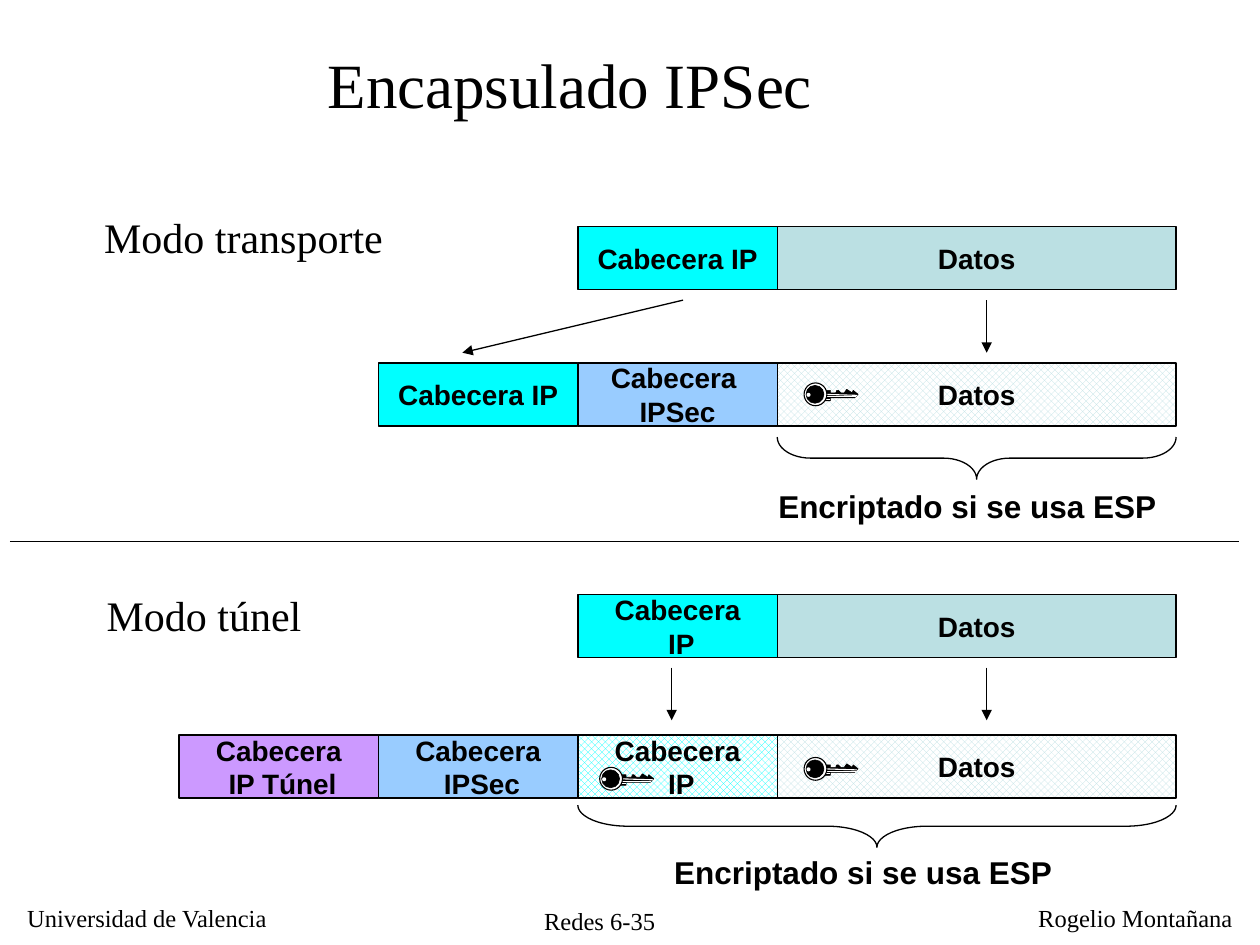
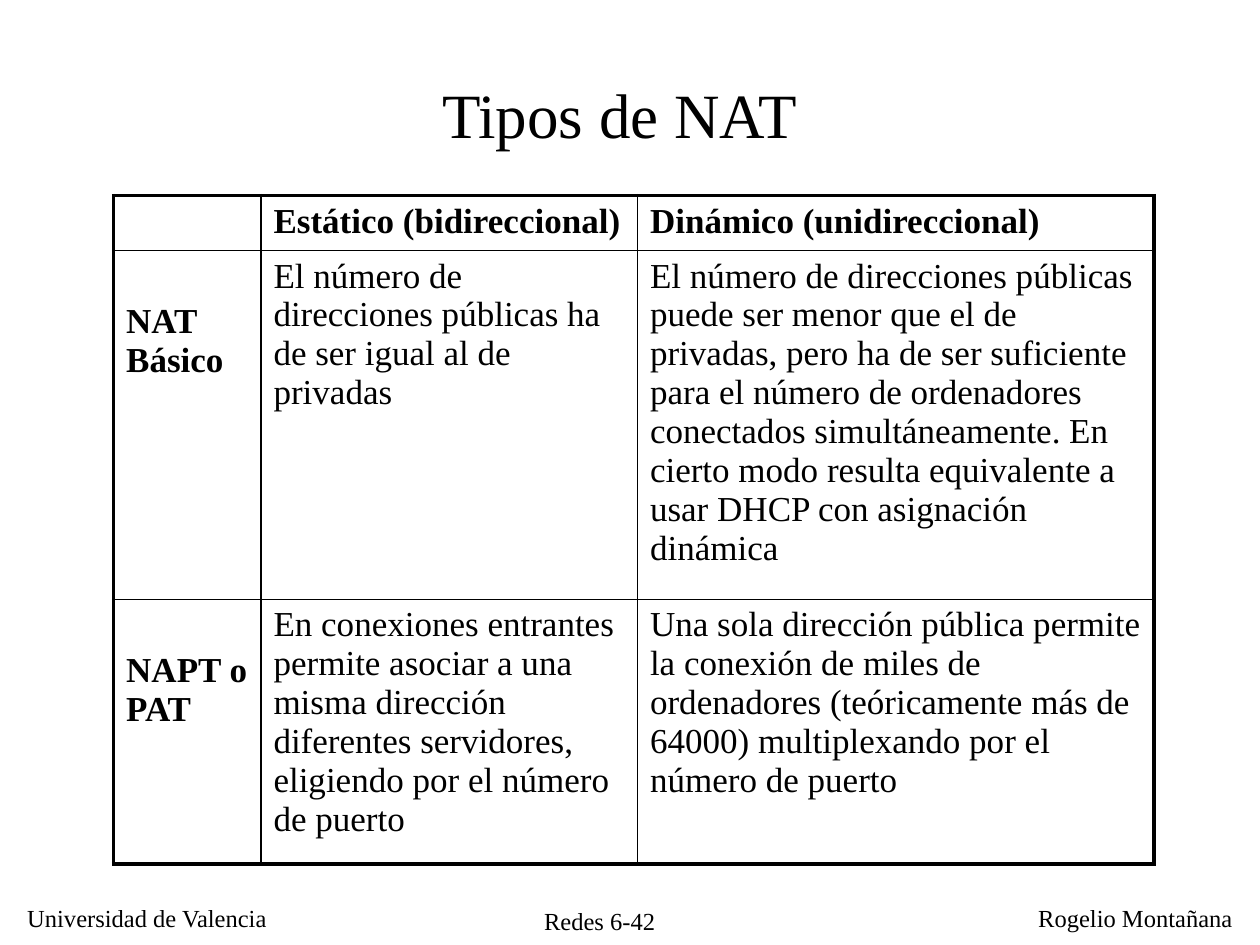
"""Build two networking slides: IPSec encapsulation and NAT types."""
from dataclasses import dataclass

from lxml.etree import SubElement
from pptx import Presentation
from pptx.dml.color import RGBColor
from pptx.enum.dml import MSO_PATTERN
from pptx.enum.shapes import MSO_CONNECTOR, MSO_SHAPE
from pptx.enum.text import MSO_ANCHOR, MSO_AUTO_SIZE, PP_ALIGN
from pptx.oxml import parse_xml
from pptx.oxml.ns import nsdecls, qn
from pptx.util import Cm, Pt


@dataclass(frozen=True)
class Theme:
    """Colours, fonts and type sizes of the deck."""
    black: str = "000000"
    white: str = "FFFFFF"
    ip: str = "00FFFF"
    ipsec: str = "99CCFF"
    tunnel: str = "CC99FF"
    data: str = "BBE0E3"
    serif: str = "Times New Roman"
    sans: str = "Arial"
    title: float = 36
    mode: float = 24
    cell: float = 20
    note: float = 18
    box: float = 16
    footer: float = 14
    thin: float = 0.75
    inner: float = 1
    outer: float = 2.25


LEFT, STEP, BOX_H, BRACE_H = 3.61, 4.02, 1.27, 0.85
KEY_BLADE = [(.38, .36), (.53, .36), (.53, .3), (1.02, .3), (1.09, .23), (.99, .15),
             (.97, .2), (.86, .13), (.81, .2), (.74, .2), (.69, .15), (.66, .15),
             (.64, .2), (.53, .2), (.53, .15), (.36, .15)]
KEY_GROOVES = [(.43, .23, 1.07, .25), (1.04, .28, .23, .28), (.53, .33, .28, .33)]


class Deck:
    """Hold the theme and the current slide, and draw each kind of element."""

    def __init__(self, theme):
        self.t = theme
        self.prs = Presentation()
        self.prs.slide_width, self.prs.slide_height = Cm(25.4), Cm(19.05)
        self.s = None

    def slide(self, title, x, y, w, number):
        self.s = self.prs.slides.add_slide(self.prs.slide_layouts[5])
        sp = self.s.shapes.title
        sp.left, sp.top, sp.width, sp.height = Cm(x), Cm(y), Cm(w), Cm(1.78)
        self.fill_text(sp.text_frame, title, self.t.title)
        self.text(number, 10.49, 18.14, 3.2, 0.76, self.t.footer, align=PP_ALIGN.CENTER)
        self.text("Universidad de Valencia", 0.3, 18.08, 5.41, 0.84, self.t.footer)
        self.text("Rogelio Montañana", 20.68, 18.08, 4.42, 0.84, self.t.footer)

    def style(self, tf, size, font=None, bold=False, align=PP_ALIGN.LEFT):
        for p in tf.paragraphs:
            p.alignment = align
            for r in p.runs:
                r.font.size, r.font.bold = Pt(size), bold
                r.font.name = font or self.t.serif
                r.font.color.rgb = RGBColor.from_string(self.t.black)

    def fill_text(self, tf, text, size, anchor=MSO_ANCHOR.TOP, grow=True, **style):
        tf.text = text
        tf.word_wrap = False
        tf.vertical_anchor = anchor
        tf.auto_size = MSO_AUTO_SIZE.SHAPE_TO_FIT_TEXT if grow else MSO_AUTO_SIZE.NONE
        self.style(tf, size, **style)

    def text(self, text, x, y, w, h, size, **style):
        sp = self.s.shapes.add_textbox(Cm(x), Cm(y), Cm(w), Cm(h))
        self.fill_text(sp.text_frame, text, size, **style)

    def shape(self, kind, x, y, w, h, fill=None, line=None, shapes=None):
        sp = (shapes or self.s.shapes).add_shape(kind, Cm(x), Cm(y), Cm(w), Cm(h))
        return self.paint(sp, fill, line)

    def paint(self, sp, fill, line):
        sp.shadow.inherit = False
        if fill:
            sp.fill.solid()
            sp.fill.fore_color.rgb = RGBColor.from_string(fill)
        else:
            sp.fill.background()
        if line:
            sp.line.color.rgb = RGBColor.from_string(self.t.black)
            sp.line.width = Pt(line)
        else:
            sp.line.fill.background()
        return sp

    def box(self, text, col, y, fill, span=1, encrypted=False):
        sp = self.shape(MSO_SHAPE.RECTANGLE, LEFT + col * STEP, y, span * STEP, BOX_H,
                        fill, self.t.thin)
        if encrypted:
            sp.fill.patterned()
            sp.fill.pattern = MSO_PATTERN.LARGE_CHECKER_BOARD
            sp.fill.fore_color.rgb = RGBColor.from_string(fill)
            sp.fill.back_color.rgb = RGBColor.from_string(self.t.white)
        self.fill_text(sp.text_frame, text, self.t.box, MSO_ANCHOR.MIDDLE, grow=False,
                       font=self.t.sans, bold=True, align=PP_ALIGN.CENTER)

    def line(self, x1, y1, x2, y2, color=None, width=None, arrow=False, shapes=None):
        c = (shapes or self.s.shapes).add_connector(
            MSO_CONNECTOR.STRAIGHT, Cm(x1), Cm(y1), Cm(x2), Cm(y2))
        c.line.color.rgb = RGBColor.from_string(color or self.t.black)
        c.line.width = Pt(width or self.t.thin)
        spPr = c.element.spPr
        if arrow:
            SubElement(spPr.find(qn("a:ln")), qn("a:tailEnd"), type="triangle")
        SubElement(spPr, qn("a:effectLst"))

    def brace(self, col, span, y):
        w = span * STEP
        cx, cy = LEFT + col * STEP + w / 2, y + BRACE_H / 2
        sp = self.shape(MSO_SHAPE.LEFT_BRACE, cx - BRACE_H / 2, cy - w / 2, BRACE_H, w,
                        line=self.t.thin)
        sp.rotation = 270
        sp.adjustments[0] = w / BRACE_H / 12
        sp.adjustments[1] = 0.5

    def key(self, x, y):
        shapes = self.s.shapes.add_group_shape().shapes
        start, *rest = [(Cm(x + dx), Cm(y + dy)) for dx, dy in KEY_BLADE]
        blade = shapes.build_freeform(*start, scale=1.0)
        blade.add_line_segments(rest, close=True)
        self.paint(blade.convert_to_shape(), self.t.black, 0.38)
        for x1, y1, x2, y2 in KEY_GROOVES:
            self.line(x + x1, y + y1, x + x2, y + y2, self.t.white, 0.63, shapes=shapes)
        for dx, dy, d, fill, line in [(0, 0, .46, self.t.white, 0.63),
                                      (.04, .05, .36, self.t.black, 0.38),
                                      (.05, .2, .08, self.t.white, None)]:
            self.shape(MSO_SHAPE.OVAL, x + dx, y + dy, d, d, fill, line, shapes)

    def borders(self, cell, edges):
        tcPr = cell._tc.get_or_add_tcPr()
        for i, (side, outer) in enumerate(zip("LRTB", edges)):
            width = Pt(self.t.outer if outer else self.t.inner)
            tcPr.insert(i, parse_xml(
                f'<a:ln{side} {nsdecls("a")} w="{width}"><a:solidFill>'
                f'<a:srgbClr val="{self.t.black}"/></a:solidFill></a:ln{side}>'))

    def table(self, rows, x, y, widths, heights):
        tbl = self.s.shapes.add_table(len(rows), len(widths), Cm(x), Cm(y),
                                      Cm(sum(widths)), Cm(sum(heights))).table
        tbl.first_row = tbl.horz_banding = False
        for col, w in zip(tbl.columns, widths):
            col.width = Cm(w)
        for row, h in zip(tbl.rows, heights):
            row.height = Cm(h)
        last_row, last_col = len(rows) - 1, len(widths) - 1
        for i, row in enumerate(rows):
            for j, text in enumerate(row):
                cell = tbl.cell(i, j)
                cell.text = text
                cell.fill.background()
                if i and not j:
                    cell.margin_top = Cm(1.05)
                self.style(cell.text_frame, self.t.cell, bold=not (i and j))
                self.borders(cell, (j == 0, j == last_col, i == 0, i == last_row))


def ipsec_slide(d):
    t = d.t
    d.slide("Encapsulado IPSec", 6.35, 0.79, 10.29, "Redes 6-35")
    d.text("Modo transporte", 1.85, 4.14, 6.12, 1.27, t.mode)
    d.text("Modo túnel", 1.9, 11.76, 4.45, 1.27, t.mode)
    d.line(0.2, 10.92, 24.97, 10.92)
    plain_y, transport_y, tunnel_plain_y, tunnel_y = 4.57, 7.32, 11.99, 14.82
    for y, encrypted in [(plain_y, False), (transport_y, True),
                         (tunnel_plain_y, False), (tunnel_y, True)]:
        d.box("Datos", 3, y, t.data, span=2, encrypted=encrypted)
    d.box("Cabecera IP", 2, plain_y, t.ip)
    d.box("Cabecera IP", 1, transport_y, t.ip)
    d.box("Cabecera \nIPSec", 2, transport_y, t.ipsec)
    d.box("Cabecera\n IP", 2, tunnel_plain_y, t.ip)
    d.box("Cabecera\n IP Túnel", 0, tunnel_y, t.tunnel)
    d.box("Cabecera\n IPSec", 1, tunnel_y, t.ipsec)
    d.box("Cabecera\n IP", 2, tunnel_y, t.ip, encrypted=True)
    for x1, x2, y in [(19.89, 19.89, 6.05), (13.77, 9.32, 6.05),
                      (19.89, 19.89, 13.46), (13.54, 13.54, 13.46)]:
        d.line(x1, y, x2, y + 1.06, arrow=True)
    for col, span, y, x, note_y in [(3, 2, 8.81, 15.44, 9.7), (2, 3, 16.23, 13.34, 17.07)]:
        d.brace(col, span, y)
        d.text("Encriptado si se usa ESP", x, note_y, 8.13, 1.02, t.note,
               font=t.sans, bold=True)
    for x, y in [(16.21, 7.72), (16.21, 15.27), (12.09, 15.47)]:
        d.key(x, y)


def nat_slide(d):
    d.slide("Tipos de NAT", 8.66, 1.4, 7.85, "Redes 6-42")
    d.table([
        ["", "Estático (bidireccional)", "Dinámico (unidireccional)"],
        ["NAT Básico",
         "El número de direcciones públicas ha de ser igual al de privadas",
         "El número de direcciones públicas puede ser menor que el de privadas, pero ha "
         "de ser suficiente para el número de ordenadores conectados simultáneamente. En "
         "cierto modo resulta equivalente a usar DHCP con asignación dinámica"],
        ["NAPT o PAT",
         "En conexiones entrantes permite asociar a una misma dirección diferentes "
         "servidores, eligiendo por el número de puerto",
         "Una sola dirección pública permite la conexión de miles de ordenadores "
         "(teóricamente más de 64000) multiplexando por el número de puerto"],
    ], 2.29, 3.94, [2.97, 7.59, 10.41], [1.11, 7.03, 5.33])


def main():
    d = Deck(Theme())
    ipsec_slide(d)
    nat_slide(d)
    d.prs.save("out.pptx")


if __name__ == "__main__":
    main()
